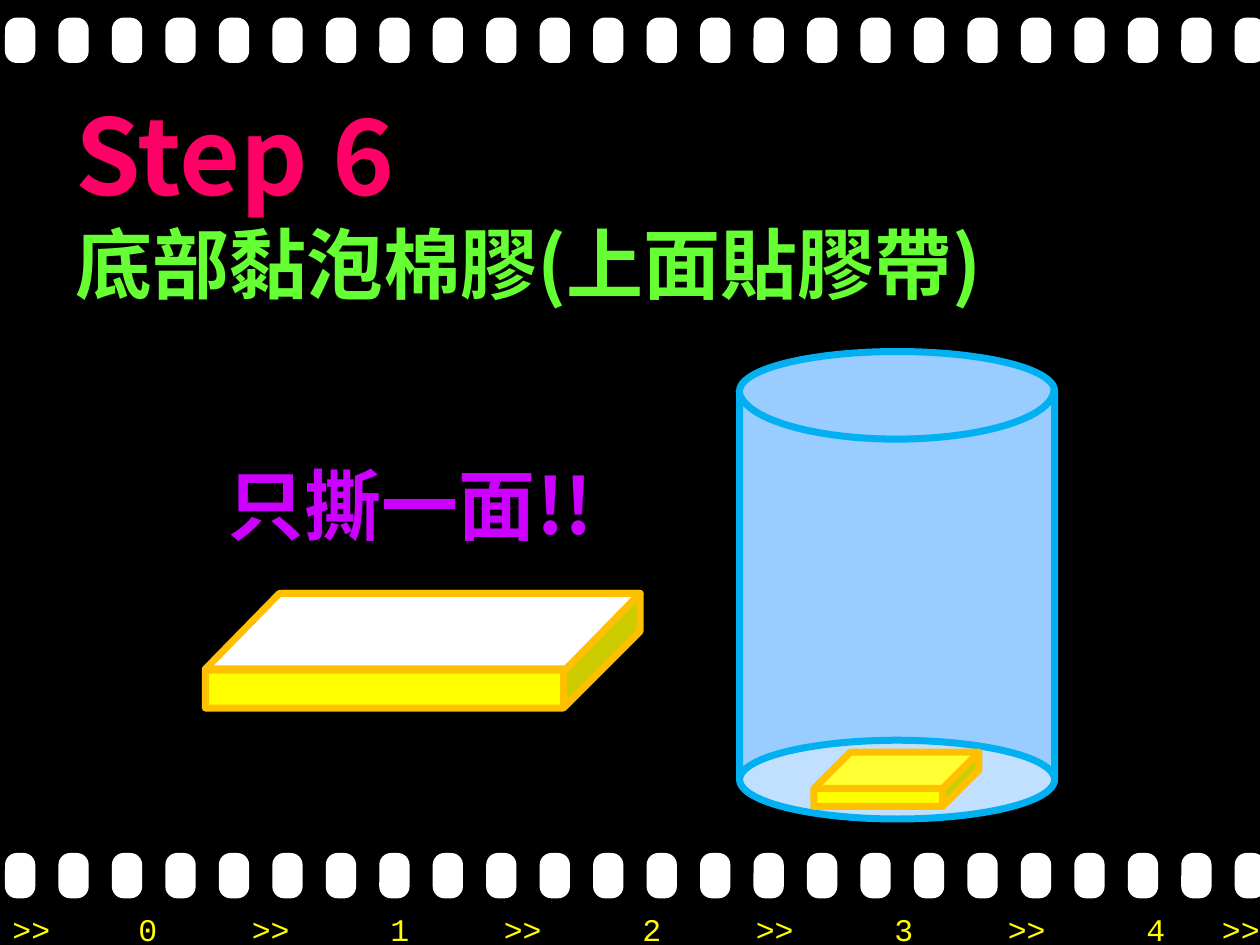
from pptx import Presentation
from pptx import util as u
from pptx.dml.color import RGBColor
from pptx.enum import shapes, text
from pptx.oxml import ns
from lxml import etree

theme = {
    "black": "000000", "white": "FFFFFF", "yellow": "FFFF00", "gold": "FFC000",
    "pink": "FF0066", "green": "66FF33", "purple": "CC00FF",
    "glass": "99CCFF", "rim": "00B0F0",
    "cjk": "Noto Sans CJK SC", "mono": "Courier New",
    "big": 60, "mid": 44, "small": 18, "edge": 4,
}
kinds = shapes.MSO_SHAPE

deck = Presentation()
deck.slide_width, deck.slide_height = u.Inches(10), u.Inches(7.5)
slide = deck.slides.add_slide(deck.slide_layouts[6])
back = slide.background.fill
back.solid()
back.fore_color.rgb = RGBColor.from_string(theme["black"])


def add_part(kind, box, fill, line=None, adjust=()):
    part = slide.shapes.add_shape(kind, *map(u.Inches, box))
    part.shadow.inherit = False
    part.fill.solid()
    part.fill.fore_color.rgb = RGBColor.from_string(theme[fill])
    if line:
        part.line.color.rgb = RGBColor.from_string(theme[line])
        part.line.width = u.Pt(theme["edge"])
        etree.SubElement(part.line._get_or_add_ln(), ns.qn("a:round"))
    else:
        part.line.fill.background()
    for i, value in enumerate(adjust):
        part.adjustments[i] = value
    return part


def add_run(para, words, size, color, face="cjk"):
    run = para.add_run()
    run.text = words
    font = run.font
    font.size = u.Pt(theme[size])
    font.bold = face == "cjk"
    font.color.rgb = RGBColor.from_string(theme[color])
    font.name = theme[face]
    east = etree.SubElement(run._r.get_or_add_rPr(), ns.qn("a:ea"))
    east.set("typeface", theme[face])


pitch = 9.76 / 23
for top in (6.77, 0.14):
    for i in range(24):
        add_part(kinds.ROUNDED_RECTANGLE, (0.04 + i * pitch, top, 0.24, 0.36),
                 "white", adjust=[0.39])

strip = slide.shapes.add_textbox(*map(u.Inches, (0, 7.17, 10.2, 0.4)))
strip.text_frame.word_wrap = False
para = strip.text_frame.paragraphs[0]
stops = etree.SubElement(para._p.get_or_add_pPr(), ns.qn("a:tabLst"))
for place in (1, 1.9, 3, 3.9, 5, 5.9, 7, 7.9, 9, 9.6):
    stop = etree.SubElement(stops, ns.qn("a:tab"))
    stop.set("pos", str(u.Inches(place)))
    stop.set("algn", "l")
marks = "\t".join(f">>\t{i}" for i in range(5)) + "\t>>"
add_run(para, marks, "small", "yellow", "mono")

title = slide.shapes.add_textbox(*map(u.Inches, (0.5, 0.6, 9, 1.97)))
title.text_frame.word_wrap = True
title.text_frame.vertical_anchor = text.MSO_ANCHOR.MIDDLE
para = title.text_frame.paragraphs[0]
add_run(para, "Step 6", "big", "pink")
para.add_line_break()
add_run(para, "底部黏泡棉膠(上面貼膠帶)", "mid", "green")

add_part(kinds.CUBE, (1.63, 4.71, 3.45, 0.91), "yellow", "gold", [0.67])
add_part(kinds.PARALLELOGRAM, (1.63, 4.71, 3.45, 0.6), "white", "gold", [0.98])

note = slide.shapes.add_textbox(*map(u.Inches, (1.71, 3.58, 3.29, 0.84)))
note.text_frame.word_wrap = False
add_run(note.text_frame.paragraphs[0], "只撕一面!!", "mid", "purple")

can = add_part(kinds.CAN, (5.87, 2.79, 2.5, 3.71), "glass", "rim")
can._element.spPr.get_or_add_xfrm().set("flipV", "1")
add_part(kinds.CUBE, (6.46, 5.97, 1.31, 0.43), "yellow", "gold", [0.67])
rim = add_part(kinds.ARC, (6.72, 1.84, 0.79, 2.5), "glass", "rim", [162, 53.77])
rim.rotation = 90

deck.save("out.pptx")
